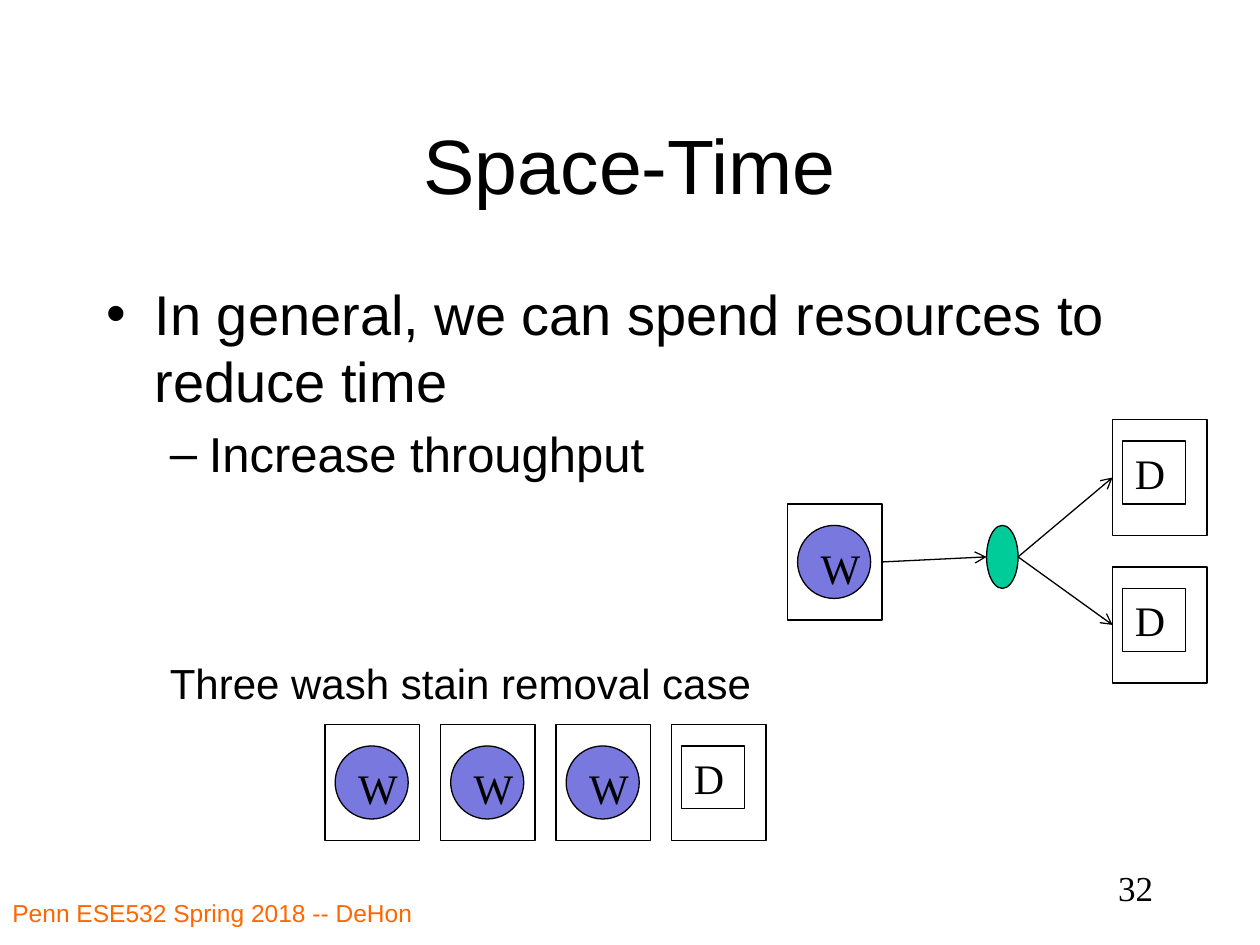
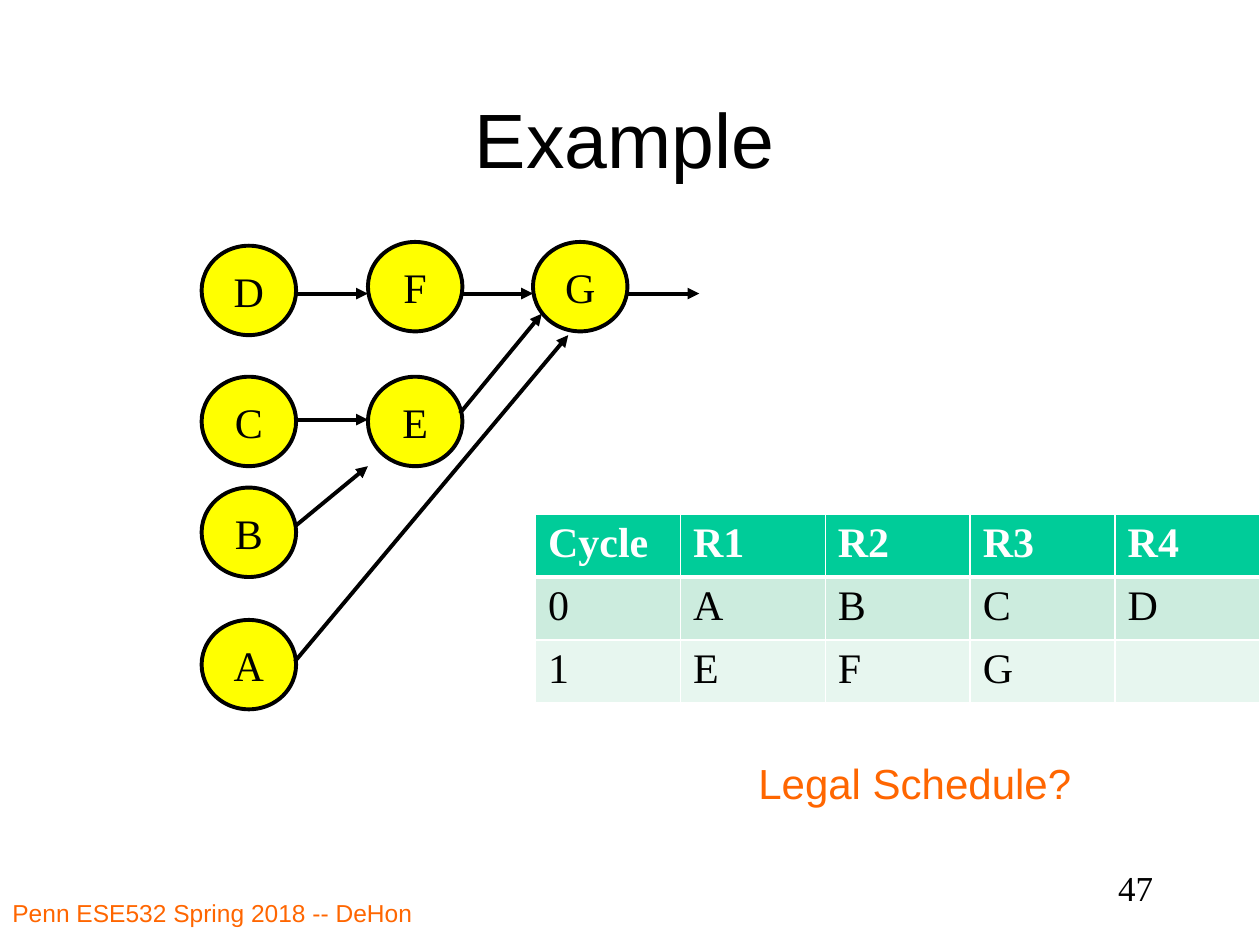
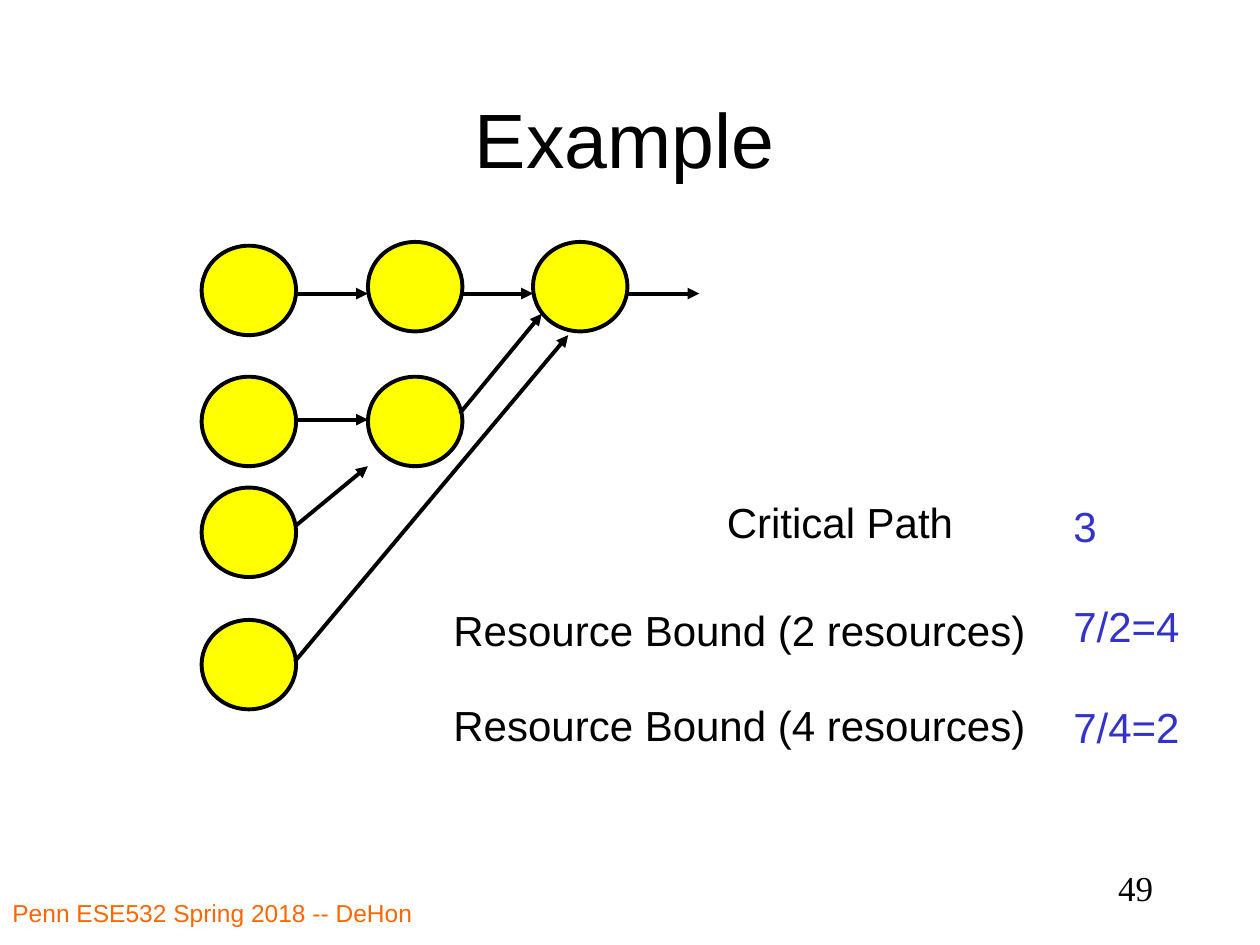
from dataclasses import dataclass

from lxml.etree import SubElement
from pptx import Presentation
from pptx.dml.color import RGBColor as Rgb
from pptx.enum.shapes import MSO_CONNECTOR as Connector, MSO_SHAPE as Preset
from pptx.enum.text import MSO_ANCHOR as Anchor, PP_ALIGN as Align
from pptx.oxml.ns import qn
from pptx.util import Inches, Pt


@dataclass(frozen=True)
class Theme:
    black: Rgb = Rgb(0x00, 0x00, 0x00)
    white: Rgb = Rgb(0xFF, 0xFF, 0xFF)
    orange: Rgb = Rgb(0xFF, 0x66, 0x00)
    blue: Rgb = Rgb(0x33, 0x33, 0xCC)
    washer: Rgb = Rgb(0x78, 0x78, 0xDE)
    green: Rgb = Rgb(0x00, 0xCC, 0x99)
    yellow: Rgb = Rgb(0xFF, 0xFF, 0x00)
    bands: tuple = (Rgb(0xCC, 0xEC, 0xDE), Rgb(0xE7, 0xF6, 0xEF))
    sans: str = "Arial"
    serif: str = "Times New Roman"
    title: int = 44
    bullet: int = 32
    dash: int = 28
    label: int = 24
    number: int = 20
    footer: int = 14
    thin: float = 0.75
    thick: float = 2.25


THEME = Theme()
FOOTER = "Penn ESE532 Spring 2018 -- DeHon"

MACHINE_SIZE = (0.75, 0.92)
NODE_SIZE = (0.75, 0.71)
NODES = {
    "D": (1.6, 1.95),
    "C": (1.6, 2.99),
    "B": (1.6, 3.87),
    "A": (1.6, 4.92),
    "F": (2.92, 1.92),
    "G": (4.23, 1.92),
    "E": (2.92, 2.99),
}
EDGES = [
    ((2.35, 2.33), (2.92, 2.33)),
    ((3.66, 2.33), (4.23, 2.33)),
    ((4.98, 2.33), (5.55, 2.33)),
    ((2.35, 3.33), (2.92, 3.33)),
    ((2.35, 4.17), (2.92, 3.7)),
    ((2.34, 5.25), (4.51, 2.66)),
    ((3.65, 3.28), (4.3, 2.49)),
]
SCHEDULE = [
    ["Cycle", "R1", "R2", "R3", "R4"],
    ["0", "A", "B", "C", "D"],
    ["1", "E", "F", "G", ""],
]


def inches(*lengths):
    return [Inches(length) for length in lengths]


def style_font(para, size, face=THEME.sans, color=THEME.black, bold=False):
    font = para.font
    font.size = Pt(size)
    font.name = face
    font.bold = bold
    font.color.rgb = color


def add_text(shapes, place, lines, size=THEME.label, face=THEME.sans,
             color=THEME.black, align=Align.LEFT, anchor=Anchor.TOP,
             wrap=False, gap=0):
    frame = shapes.add_textbox(*inches(*place)).text_frame
    frame.word_wrap = wrap
    frame.vertical_anchor = anchor
    frame.text = "\n".join(lines)
    for index, para in enumerate(frame.paragraphs):
        para.alignment = align
        if index:
            para.space_before = Pt(gap)
        style_font(para, size, face, color)


def add_bullets(page, place, items):
    frame = page.shapes.add_textbox(*inches(*place)).text_frame
    frame.word_wrap = True
    frame.text = "\n".join(item[0] for item in items)
    for para, (_, level, mark, size, margin, hang) in zip(frame.paragraphs, items):
        para.level = level
        para.space_before = Pt(size * 0.2)
        props = para._p.get_or_add_pPr()
        props.set("marL", str(Inches(margin)))
        props.set("indent", str(-Inches(hang)))
        SubElement(props, qn("a:buFont"), typeface=THEME.sans)
        SubElement(props, qn("a:buChar"), char=mark)
        style_font(para, size)


def add_figure(shapes, preset, place, fill, weight=THEME.thin, label="", centred=False):
    figure = shapes.add_shape(preset, *inches(*place))
    figure.shadow.inherit = False
    figure.fill.solid()
    figure.fill.fore_color.rgb = fill
    figure.line.color.rgb = THEME.black
    figure.line.width = Pt(weight)
    if label:
        frame = figure.text_frame
        frame.word_wrap = not centred
        frame.vertical_anchor = Anchor.MIDDLE if centred else Anchor.TOP
        frame.text = label
        para = frame.paragraphs[0]
        para.alignment = Align.CENTER if centred else Align.LEFT
        style_font(para, THEME.label, THEME.serif)
    return figure


def add_arrow(shapes, start, end, weight, head):
    arrow = shapes.add_connector(Connector.STRAIGHT, *inches(*start, *end))
    arrow.line.color.rgb = THEME.black
    arrow.line.width = Pt(weight)
    SubElement(arrow.line._get_or_add_ln(), qn("a:tailEnd"), type=head)
    SubElement(arrow._element.spPr, qn("a:effectLst"))
    return arrow


def add_machine(shapes, left, top, label):
    cabinet = add_figure(shapes, Preset.RECTANGLE, (left, top, *MACHINE_SIZE), THEME.white)
    if label == "W":
        preset, side, fill = Preset.OVAL, 0.58, THEME.washer
    else:
        preset, side, fill = Preset.RECTANGLE, 0.5, THEME.white
    add_figure(shapes, preset, (left + 0.08, top + 0.17, side, side), fill, label=label)
    return cabinet


def add_graph(page, labelled):
    for name, corner in NODES.items():
        add_figure(page.shapes, Preset.OVAL, (*corner, *NODE_SIZE), THEME.yellow,
                   THEME.thick, name if labelled else "", centred=True)
    for start, end in EDGES:
        add_arrow(page.shapes, start, end, THEME.thick, "triangle")


def border_cell(cell, is_header):
    props = cell._tc.get_or_add_tcPr()
    for side in ("lnL", "lnR", "lnT", "lnB"):
        weight = 3 if is_header and side == "lnB" else 1
        line = SubElement(props, qn(f"a:{side}"), w=str(Pt(weight)))
        fill = SubElement(line, qn("a:solidFill"))
        SubElement(fill, qn("a:srgbClr"), val=str(THEME.white))


def add_schedule(page, left, top, column_width, row_height):
    rows, columns = len(SCHEDULE), len(SCHEDULE[0])
    size = (column_width * columns, row_height * rows)
    table = page.shapes.add_table(rows, columns, *inches(left, top, *size)).table
    for row, values in enumerate(SCHEDULE):
        is_header = row == 0
        for column, value in enumerate(values):
            cell = table.cell(row, column)
            border_cell(cell, is_header)
            cell.fill.solid()
            cell.fill.fore_color.rgb = THEME.green if is_header else THEME.bands[row - 1]
            cell.text = value
            style_font(cell.text_frame.paragraphs[0], THEME.label, THEME.serif,
                       THEME.white if is_header else THEME.black, is_header)


def add_page(deck, title, number, title_corner=(0.71, 0.47)):
    page = deck.slides.add_slide(deck.slide_layouts[6])
    add_text(page.shapes, (*title_corner, 8.5, 1.25), [title], THEME.title,
             align=Align.CENTER, anchor=Anchor.MIDDLE, wrap=True)
    add_text(page.shapes, (0, 7.08, 4.58, 0.42), [FOOTER], THEME.footer,
             color=THEME.orange, wrap=True)
    add_text(page.shapes, (7.17, 6.83, 2.08, 0.5), [str(number)], THEME.number,
             THEME.serif, align=Align.RIGHT, wrap=True)
    return page


def build_space_time(deck):
    page = add_page(deck, "Space-Time", 32, (0.75, 0.67))
    add_bullets(page, (0.75, 2.17, 8.5, 4.5), [
        ("In general, we can spend resources to reduce time",
         0, "•", THEME.bullet, 0.38, 0.38),
        ("Increase throughput", 1, "–", THEME.dash, 0.81, 0.31),
    ])

    split = page.shapes.add_group_shape().shapes
    washer = add_machine(split, 6.25, 4, "W")
    dryers = [add_machine(split, 8.83, top, "D") for top in (3.33, 4.5)]
    add_figure(split, Preset.OVAL, (7.83, 4.17, 0.25, 0.5), THEME.green)
    for dryer, middle in zip(dryers, (3.79, 4.96)):
        arrow = add_arrow(split, (8.08, 4.42), (8.83, middle), THEME.thin, "arrow")
        arrow.end_connect(dryer, 1)
    arrow = add_arrow(split, (7, 4.46), (7.83, 4.42), THEME.thin, "arrow")
    arrow.begin_connect(washer, 3)

    stain = page.shapes.add_group_shape().shapes
    for index, label in enumerate("WWWD"):
        add_machine(stain, 2.58 + index * 11 / 12, 5.75, label)
    add_text(stain, (1.25, 5.17, 4.86, 0.5), ["Three wash stain removal case"])


def build_schedule(deck):
    page = add_page(deck, "Example", 47)
    add_graph(page, labelled=True)
    add_text(page.shapes, (5.92, 5.96, 2.71, 0.5), ["Legal Schedule?"], color=THEME.orange)
    add_schedule(page, 4.25, 4.08, 1.15, 0.4)


def build_bounds(deck):
    page = add_page(deck, "Example", 49)
    add_graph(page, labelled=False)
    add_text(page.shapes, (5.67, 3.89, 2, 0.5), ["Critical Path"])
    for top, resources in ((4.75, 2), (5.5, 4)):
        add_text(page.shapes, (3.5, top, 4.74, 0.5),
                 [f"Resource Bound ({resources} resources)"])
    add_text(page.shapes, (8.42, 3.92, 1.05, 2.1), ["3", "7/2=4", "7/4=2"],
             color=THEME.blue, gap=THEME.label * 1.2)


def main():
    deck = Presentation()
    deck.slide_width, deck.slide_height = inches(10, 7.5)
    build_space_time(deck)
    build_schedule(deck)
    build_bounds(deck)
    deck.save("out.pptx")


if __name__ == "__main__":
    main()
